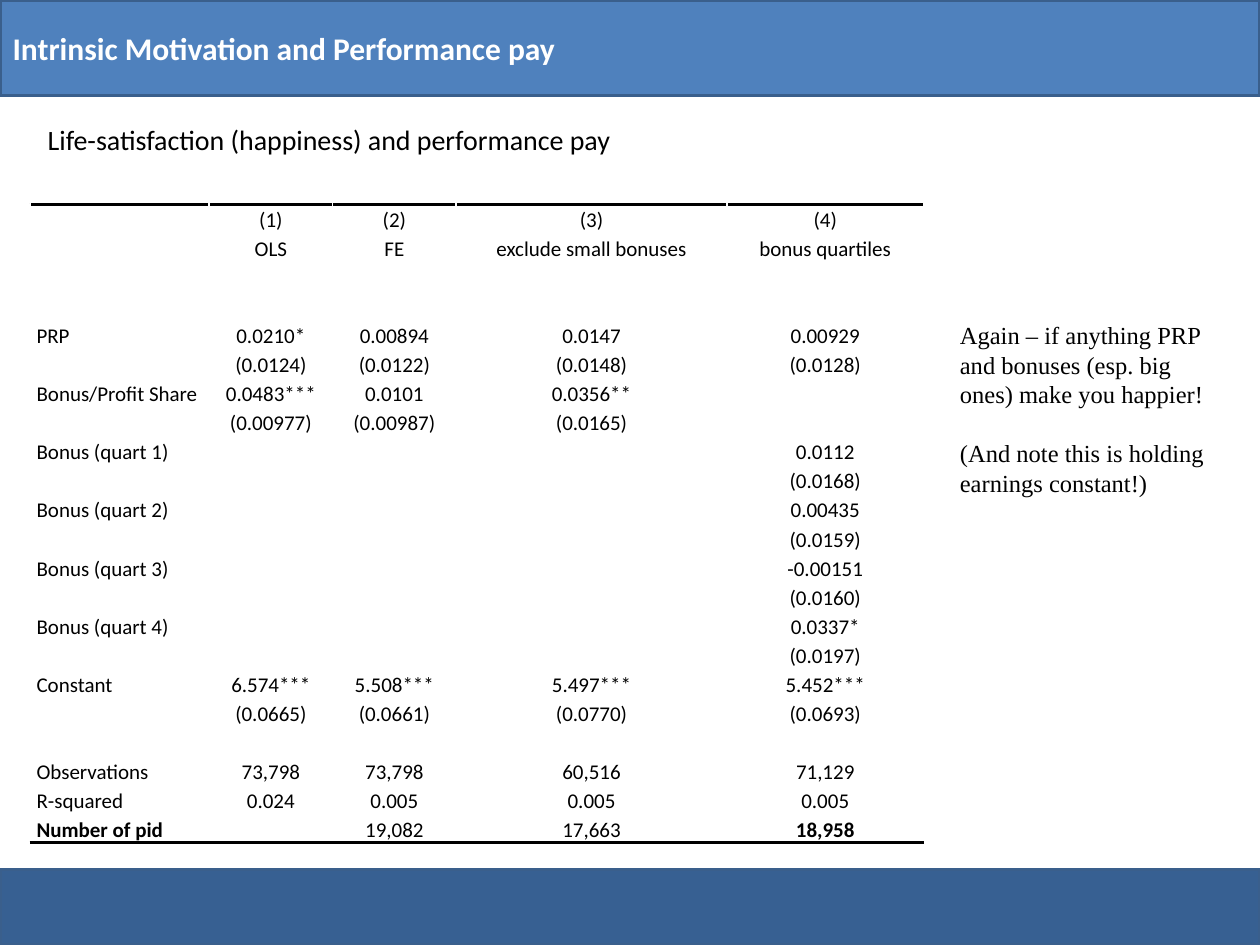
from lxml.etree import SubElement
from pptx import Presentation
from pptx.dml.color import RGBColor
from pptx.enum.shapes import MSO_SHAPE
from pptx.enum.text import MSO_ANCHOR, PP_ALIGN
from pptx.oxml import parse_xml
from pptx.oxml.ns import nsdecls, qn
from pptx.util import Inches, Pt

COLORS = {
    "black": "000000",
    "white": "FFFFFF",
    "banner": "4F81BD",
    "footer": "376092",
    "outline": "3A5F8C",
}
COLUMN_WIDTHS = [1.42, 0.98, 0.98, 2.15, 1.56]
ROW_HEIGHT = 0.23
BLANK = [""] * 5
RESULTS = [
    ["", "(1)", "(2)", "(3)", "(4)"],
    ["", "OLS", "FE", "exclude small bonuses", "bonus quartiles"],
    BLANK,
    BLANK,
    ["PRP", "0.0210*", "0.00894", "0.0147", "0.00929"],
    ["", "(0.0124)", "(0.0122)", "(0.0148)", "(0.0128)"],
    ["Bonus/Profit Share", "0.0483***", "0.0101", "0.0356**", ""],
    ["", "(0.00977)", "(0.00987)", "(0.0165)", ""],
    ["Bonus (quart 1)", "", "", "", "0.0112"],
    ["", "", "", "", "(0.0168)"],
    ["Bonus (quart 2)", "", "", "", "0.00435"],
    ["", "", "", "", "(0.0159)"],
    ["Bonus (quart 3)", "", "", "", "-0.00151"],
    ["", "", "", "", "(0.0160)"],
    ["Bonus (quart 4)", "", "", "", "0.0337*"],
    ["", "", "", "", "(0.0197)"],
    ["Constant", "6.574***", "5.508***", "5.497***", "5.452***"],
    ["", "(0.0665)", "(0.0661)", "(0.0770)", "(0.0693)"],
    BLANK,
    ["Observations", "73,798", "73,798", "60,516", "71,129"],
    ["R-squared", "0.024", "0.005", "0.005", "0.005"],
    ["Number of pid", "", "19,082", "17,663", "18,958"],
]
BOLD_CELLS = {"Number of pid", "18,958"}


class SlideBuilder:
    def __init__(self, slide, font="Calibri"):
        self.slide = slide
        self.font = font

    def color(self, name):
        return RGBColor.from_string(COLORS[name])

    def style(self, paragraph, size, color="black", font=None, bold=False):
        paragraph.font.name = font or self.font
        paragraph.font.size = Pt(size)
        paragraph.font.bold = bold
        paragraph.font.color.rgb = self.color(color)

    def paint(self, shape, fill):
        shape.fill.solid()
        shape.fill.fore_color.rgb = self.color(fill)
        shape.line.color.rgb = self.color("outline")
        shape.line.width = Pt(2)

    def title(self, text, left, top, width, height):
        title = self.slide.shapes.title
        title.left, title.top = Inches(left), Inches(top)
        title.width, title.height = Inches(width), Inches(height)
        self.paint(title, "banner")
        title.text_frame.text = text
        title.text_frame.vertical_anchor = MSO_ANCHOR.MIDDLE
        paragraph = title.text_frame.paragraphs[0]
        paragraph.alignment = PP_ALIGN.LEFT
        self.style(paragraph, 18, "white", bold=True)

    def bar(self, left, top, width, height, fill):
        shape = self.slide.shapes.add_shape(
            MSO_SHAPE.RECTANGLE, Inches(left), Inches(top), Inches(width), Inches(height))
        shape.shadow.inherit = False
        self.paint(shape, fill)

    def text(self, lines, left, top, width, height, size, font=None,
             anchor=MSO_ANCHOR.TOP, gap=0):
        box = self.slide.shapes.add_textbox(
            Inches(left), Inches(top), Inches(width), Inches(height))
        frame = box.text_frame
        frame.word_wrap = True
        frame.vertical_anchor = anchor
        frame.text = "\n".join(lines)
        for index, paragraph in enumerate(frame.paragraphs):
            self.style(paragraph, size, font=font)
            if index:
                paragraph.space_before = Pt(gap)

    def rule(self, cell, side):
        line = parse_xml(
            f'<a:{side} {nsdecls("a")} w="{Pt(2)}"><a:solidFill>'
            f'<a:srgbClr val="{COLORS["black"]}"/></a:solidFill></a:{side}>')
        cell._tc.get_or_add_tcPr().insert(0, line)

    def cell(self, cell, text, alignment):
        cell.margin_left = cell.margin_right = Inches(0.05)
        cell.margin_top = cell.margin_bottom = 0
        cell.fill.solid()
        cell.fill.fore_color.rgb = self.color("white")
        cell.text = text
        paragraph = cell.text_frame.paragraphs[0]
        paragraph.alignment = alignment
        paragraph.line_spacing = 1.15
        self.style(paragraph, 12, bold=text in BOLD_CELLS)
        if not text:
            SubElement(paragraph._p, qn("a:endParaRPr"), sz="1200")

    def table(self, rows, widths, left, top, row_height):
        table = self.slide.shapes.add_table(
            len(rows), len(widths), Inches(left), Inches(top),
            Inches(sum(widths)), Inches(row_height * len(rows))).table
        table.first_row = table.horz_banding = False
        for column, width in zip(table.columns, widths):
            column.width = Inches(width)
        for row, values in zip(table.rows, rows):
            row.height = Inches(row_height)
            for index, (cell, value) in enumerate(zip(row.cells, values)):
                self.cell(cell, value, PP_ALIGN.CENTER if index else PP_ALIGN.LEFT)
        for index in range(len(widths)):
            self.rule(table.cell(0, index), "lnT")
            self.rule(table.cell(len(rows) - 1, index), "lnB")


def main():
    presentation = Presentation()
    presentation.slide_width = Inches(10)
    presentation.slide_height = Inches(7.5)
    builder = SlideBuilder(presentation.slides.add_slide(presentation.slide_layouts[5]))
    builder.title("Intrinsic Motivation and Performance pay", 0, 0, 10, 0.76)
    builder.text(["Life-satisfaction (happiness) and performance pay"],
                 0.28, 0.92, 8.98, 4.81, 16)
    builder.bar(0, 6.9, 10, 0.6, "footer")
    builder.text(
        ["Again – if anything PRP and bonuses (esp. big ones) make you happier!",
         "(And note this is holding earnings constant!)"],
        7.52, 2.49, 2.2, 1.51, 14, "Times New Roman", MSO_ANCHOR.MIDDLE, gap=17)
    builder.table(RESULTS, COLUMN_WIDTHS, 0.24, 1.62, ROW_HEIGHT)
    presentation.save("out.pptx")


if __name__ == "__main__":
    main()
